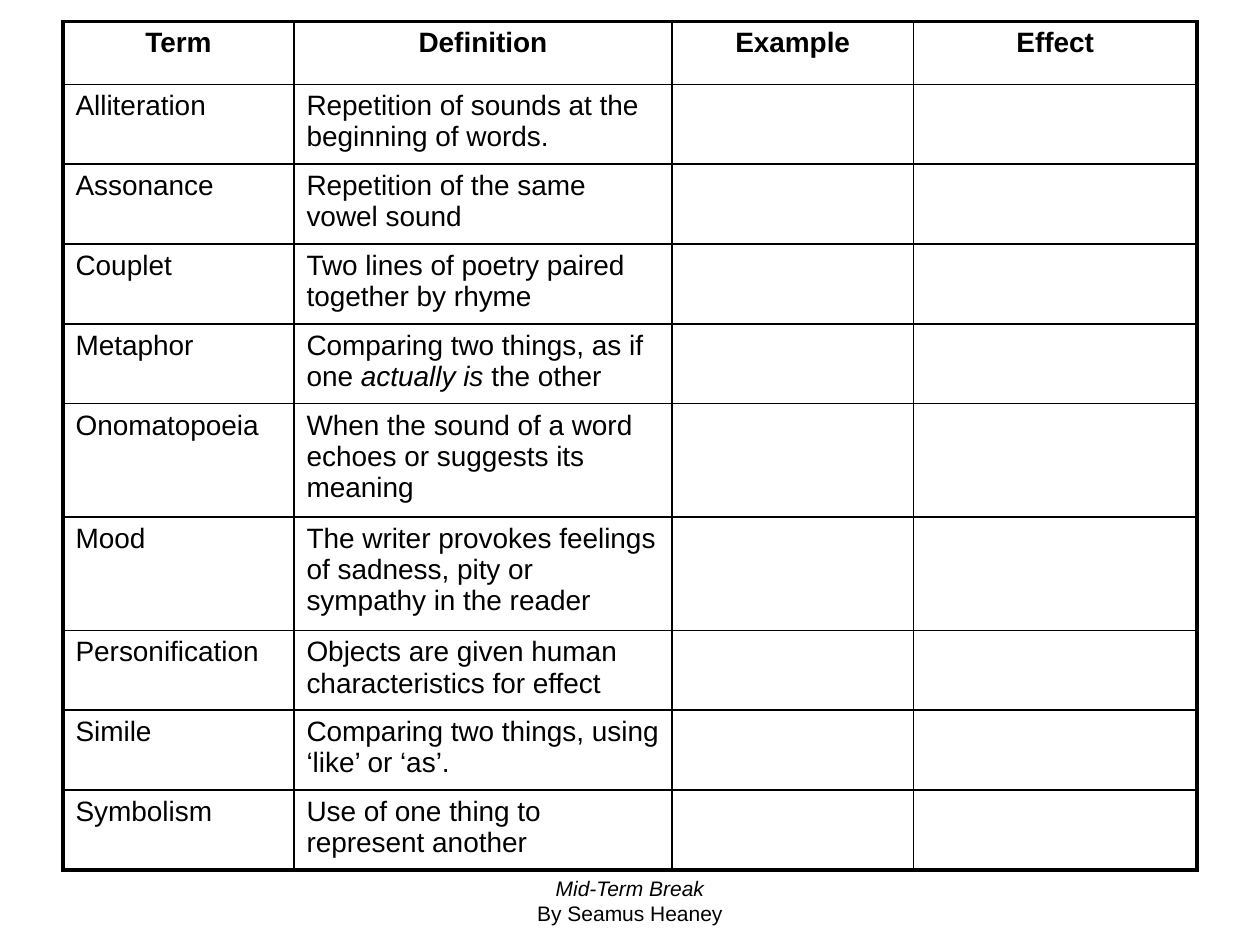
from lxml import etree
from pptx import Presentation
from pptx.dml.color import RGBColor
from pptx.enum import text as tx
from pptx.oxml import ns
from pptx.util import Pt

BLACK = RGBColor(0, 0, 0)
WHITE = RGBColor(255, 255, 255)
THICK, THIN = Pt(2.25), Pt(1)


def write(par, words, size, bold=False, slant=False):
    run = par.add_run()
    run.text = words
    font = run.font
    font.name, font.size = "Arial", Pt(size)
    font.bold, font.italic = bold, slant
    font.color.rgb = BLACK


def edge(cell, side, width):
    line = etree.SubElement(cell._tc.get_or_add_tcPr(), ns.qn("a:ln" + side), w=str(width))
    fill = etree.SubElement(line, ns.qn("a:solidFill"))
    etree.SubElement(fill, ns.qn("a:srgbClr"), val=str(BLACK))


prs = Presentation()
prs.slide_width, prs.slide_height = Pt(720), Pt(540)
slide = prs.slides.add_slide(prs.slide_layouts[6])

# Poem credit below the table
box = slide.shapes.add_textbox(Pt(246), Pt(500.4), Pt(228), Pt(28.8))
frame = box.text_frame
frame.word_wrap = True
frame.vertical_anchor = tx.MSO_ANCHOR.MIDDLE
title, author = frame.paragraphs[0], frame.add_paragraph()
title.alignment = author.alignment = tx.PP_ALIGN.CENTER
write(title, "Mid-Term Break", 12, slant=True)
write(author, "By Seamus Heaney", 12)

# Each cell is a list of runs; every second run is italic
heads = ["Term", "Definition", "Example", "Effect"]
terms = [
    ("Alliteration", ["Repetition of sounds at the beginning of words."]),
    ("Assonance", ["Repetition of the same vowel sound"]),
    ("Couplet", ["Two lines of poetry paired together by rhyme"]),
    ("Metaphor", ["Comparing two things, as if one ", "actually is", " the other"]),
    ("Onomatopoeia", ["When the sound of a word echoes or suggests its meaning"]),
    ("Mood", ["The writer provokes feelings of sadness, pity or sympathy in the reader"]),
    ("Personification", ["Objects are given human characteristics for effect"]),
    ("Simile", ["Comparing two things, using ‘like’ or ‘as’."]),
    ("Symbolism", ["Use of one thing to represent another"]),
]
rows = [[[head] for head in heads]]
rows += [[[term], meaning, [], []] for term, meaning in terms]
tall = ("Onomatopoeia", "Mood")
widths = [132, 216, 138, 162]
heights = [36] + [64.8 if term in tall else 45.6 for term, _ in terms]

# Table grid
table = slide.shapes.add_table(len(rows), len(heads), Pt(36), Pt(12.2),
                               Pt(sum(widths)), Pt(sum(heights))).table
table.first_row = table.horz_banding = False
for col, width in zip(table.columns, widths):
    col.width = Pt(width)
for row, height in zip(table.rows, heights):
    row.height = Pt(height)

# Cells, with a thick frame round the outside
last_row, last_col = len(rows) - 1, len(heads) - 1
for r, row in enumerate(rows):
    for c, runs in enumerate(row):
        cell = table.cell(r, c)
        outer = {"L": c == 0, "R": c == last_col, "T": r == 0, "B": r == last_row}
        for side, thick in outer.items():
            edge(cell, side, THICK if thick else THIN)
        cell.fill.solid()
        cell.fill.fore_color.rgb = WHITE
        par = cell.text_frame.paragraphs[0]
        if r == 0:
            par.alignment = tx.PP_ALIGN.CENTER
        for i, words in enumerate(runs):
            write(par, words, 16, bold=r == 0, slant=i % 2 == 1)

prs.save("out.pptx")
